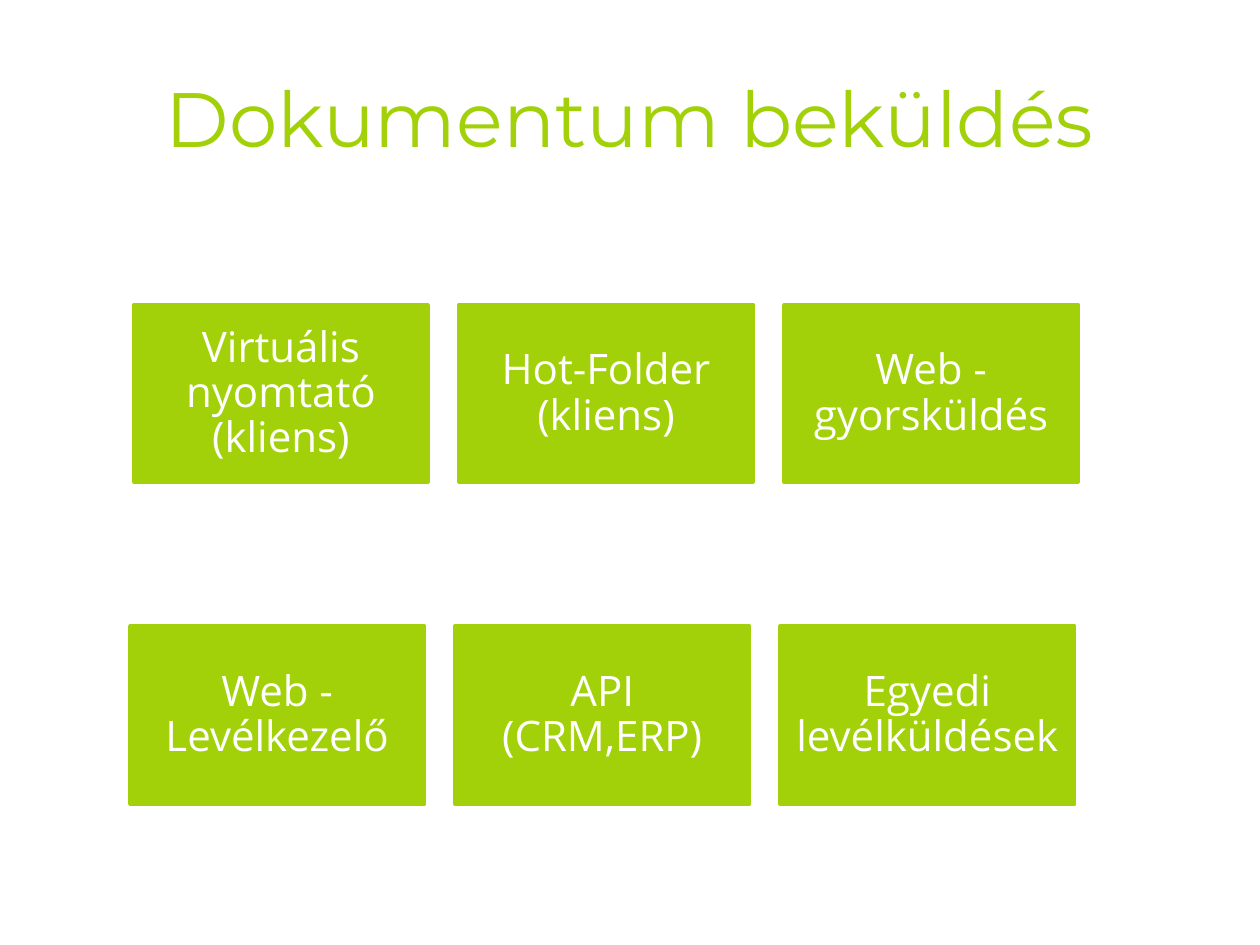
from pptx import Presentation
from pptx.dml.color import RGBColor
from pptx.enum import shapes, text
from pptx.util import Inches, Pt

GREEN = RGBColor(0xA2, 0xD1, 0x09)
WHITE = RGBColor(0xFF, 0xFF, 0xFF)

BOX_WIDTH, BOX_HEIGHT, BOX_PITCH = Inches(2.34), Inches(1.41), Inches(2.58)

ROWS = [
    (Inches(1.06), Inches(2.42),
     ["Virtuális nyomtató (kliens)", "Hot-Folder (kliens)", "Web - gyorsküldés"]),
    (Inches(1.03), Inches(4.97),
     ["Web - Levélkezelő", "API (CRM,ERP)", "Egyedi levélküldések"]),
]


def write_text(shape, words, *, font, size, color, line_spacing=None, space_after=None):
    """Write one centred paragraph into a shape."""
    frame = shape.text_frame
    frame.word_wrap = True
    frame.vertical_anchor = text.MSO_ANCHOR.MIDDLE
    para = frame.paragraphs[0]
    para.alignment = text.PP_ALIGN.CENTER
    para.line_spacing = line_spacing
    para.space_after = space_after
    span = para.add_run()
    span.text = words
    span.font.name = font
    span.font.size = Pt(size)
    span.font.color.rgb = color


def add_title(page, left, top, width, height):
    title = page.shapes.title
    title.left, title.top, title.width, title.height = left, top, width, height
    write_text(title, "Dokumentum beküldés", font="Montserrat", size=44, color=GREEN)


def add_box_row(page, left, top, labels):
    """Place one group of equally spaced boxes."""
    row = page.shapes.add_group_shape()
    for column, label in enumerate(labels):
        box = row.shapes.add_shape(
            shapes.MSO_SHAPE.RECTANGLE,
            left + column * BOX_PITCH, top, BOX_WIDTH, BOX_HEIGHT)
        box.shadow.inherit = False
        box.fill.solid()
        box.fill.fore_color.rgb = GREEN
        box.line.color.rgb = GREEN
        box.line.width = Pt(2)
        frame = box.text_frame
        frame.margin_left = frame.margin_right = Inches(0.1)
        frame.margin_top = frame.margin_bottom = Inches(0.1)
        write_text(box, label, font="Open Sans", size=24, color=WHITE,
                   line_spacing=0.9, space_after=Pt(8.4))


def main():
    deck = Presentation()
    deck.slide_width, deck.slide_height = Inches(10), Inches(7.5)
    page = deck.slides.add_slide(deck.slide_layouts[5])  # title only

    # Title
    add_title(page, Inches(0.5), Inches(0.3), Inches(9), Inches(1.25))

    # Submission channels
    for left, top, labels in ROWS:
        add_box_row(page, left, top, labels)

    deck.save("out.pptx")


if __name__ == "__main__":
    main()
